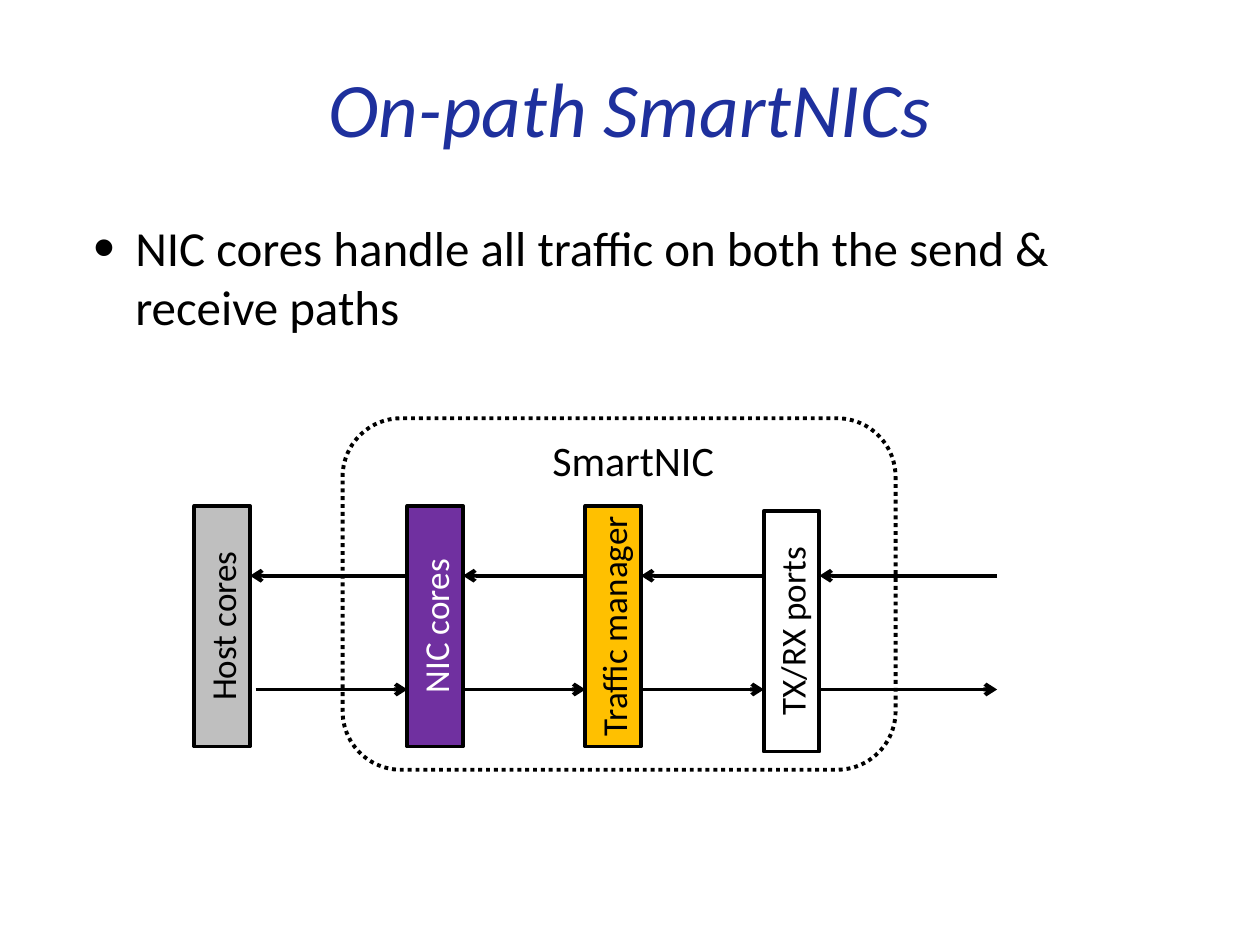
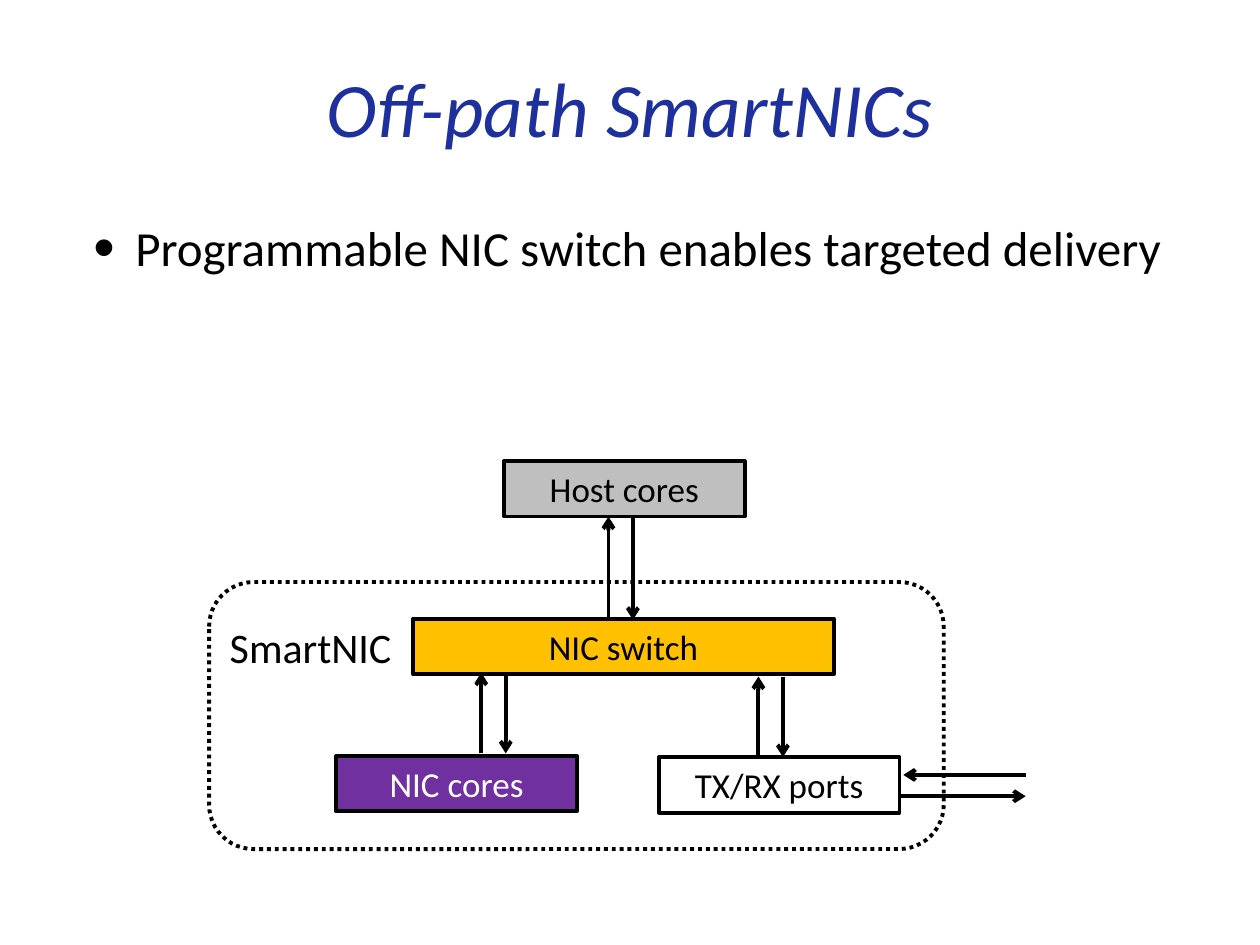
from itertools import pairwise

from lxml.etree import SubElement
from pptx import Presentation
from pptx.dml.color import RGBColor
from pptx.enum.dml import MSO_LINE
from pptx.enum.shapes import MSO_CONNECTOR, MSO_SHAPE
from pptx.enum.text import MSO_ANCHOR, PP_ALIGN
from pptx.oxml.ns import qn
from pptx.util import Pt

BLACK = RGBColor(0x00, 0x00, 0x00)
WHITE = RGBColor(0xFF, 0xFF, 0xFF)
NAVY = RGBColor(0x1E, 0x30, 0x9D)
GREY = RGBColor(0xBF, 0xBF, 0xBF)
PURPLE = RGBColor(0x70, 0x30, 0xA0)
AMBER = RGBColor(0xFF, 0xC0, 0x00)

FONT = "Calibri"
LINE_WIDTH = 2.25
INSET = 3.6
PART_LENGTH, PART_DEPTH = 137.5, 31.7
LABEL_SIZE = (104.4, 36)
BULLET_INDENT = 24


def write(box, text, size=20, color=BLACK, italic=False, align=PP_ALIGN.CENTER,
          anchor=MSO_ANCHOR.MIDDLE, line_spacing=None, space_before=None):
    """Fill a shape or text box with one formatted paragraph and return it."""
    frame = box.text_frame
    frame.word_wrap = True
    frame.vertical_anchor = anchor
    frame.margin_left = frame.margin_right = Pt(INSET)
    frame.margin_top = frame.margin_bottom = Pt(INSET)
    para = frame.paragraphs[0]
    para.alignment = align
    if line_spacing is not None:
        para.line_spacing = line_spacing
    if space_before is not None:
        para.space_before = Pt(space_before)
    span = para.add_run()
    span.text = text
    span.font.name = FONT
    span.font.size = Pt(size)
    span.font.italic = italic
    span.font.color.rgb = color
    return para


def add_text(page, text, left, top, width, height, **style):
    box = page.shapes.add_textbox(Pt(left), Pt(top), Pt(width), Pt(height))
    return write(box, text, **style)


def add_box(page, kind, left, top, width, height, fill):
    box = page.shapes.add_shape(kind, Pt(left), Pt(top), Pt(width), Pt(height))
    box.shadow.inherit = False
    box.fill.solid()
    box.fill.fore_color.rgb = fill
    box.line.color.rgb = BLACK
    box.line.width = Pt(LINE_WIDTH)
    return box


def add_part(page, text, left, top, fill, width=PART_LENGTH, color=BLACK):
    box = add_box(page, MSO_SHAPE.RECTANGLE, left, top, width, PART_DEPTH, fill)
    write(box, text, color=color)
    return box


def add_arrow(page, start_x, start_y, end_x, end_y):
    """Draw a line with an open arrowhead at its end."""
    arrow = page.shapes.add_connector(
        MSO_CONNECTOR.STRAIGHT, Pt(start_x), Pt(start_y), Pt(end_x), Pt(end_y))
    arrow.line.color.rgb = BLACK
    arrow.line.width = Pt(LINE_WIDTH)
    SubElement(arrow.line._get_or_add_ln(), qn("a:tailEnd"), type="arrow")
    SubElement(arrow._element.spPr, qn("a:effectLst"))


def add_nic_outline(page, left, top, width, height):
    outline = add_box(page, MSO_SHAPE.ROUNDED_RECTANGLE, left, top, width, height, WHITE)
    outline.line.dash_style = MSO_LINE.ROUND_DOT


def add_heading(page, title, bullet, left=49.7, top=28.8, width=620.6):
    """Title with one bullet point below it."""
    add_text(page, title, left, top, width, 71.3, size=44, color=NAVY,
             italic=True, line_spacing=0.9)
    para = add_text(page, bullet, left, top + 92.2, width, 87, size=28,
                    align=PP_ALIGN.LEFT, anchor=MSO_ANCHOR.TOP, space_before=10)
    properties = para._p.get_or_add_pPr()
    properties.set("marL", str(Pt(BULLET_INDENT)))
    properties.set("indent", str(-Pt(BULLET_INDENT)))
    SubElement(properties, qn("a:buSzPct"), val="125000")
    SubElement(properties, qn("a:buFont"), typeface="Arial")
    SubElement(properties, qn("a:buChar"), char="•")


def add_on_path_diagram(page, left, top, width, height):
    """Upright stages in a row, with receive arrows above send arrows."""
    add_nic_outline(page, left, top, width, height)

    # Stages: name, centre from the outline's corner, fill, text colour
    stages = [
        ("Host cores", -68.8, 118.8, GREY, BLACK),
        ("NIC cores", 52.9, 118.8, PURPLE, WHITE),
        ("Traffic manager", 154.6, 118.8, AMBER, BLACK),
        ("TX/RX ports", 256.6, 121.7, WHITE, BLACK),
    ]
    for name, center_x, center_y, fill, color in stages:
        stage = add_part(page, name, left + center_x - PART_LENGTH / 2,
                         top + center_y - PART_DEPTH / 2, fill, color=color)
        stage.rotation = 270

    # Arrows between neighbours, the last pair leading to the network
    half = PART_DEPTH / 2
    network_x = 374
    centers = [stage[1] for stage in stages] + [network_x + half]
    receive_y, send_y = top + 90, top + 155
    for near, far in pairwise(centers):
        near_x, far_x = left + near + half, left + far - half
        add_arrow(page, far_x, receive_y, near_x, receive_y)
        send_gap = 3.3 if near == centers[0] else 0
        add_arrow(page, near_x + send_gap, send_y, far_x, send_y)

    add_text(page, "SmartNIC", left + 113.8, top + 5.8, *LABEL_SIZE, size=24)


def add_off_path_diagram(page, left, top, width, height):
    """A switch that links the host, the NIC cores and the ports."""
    add_nic_outline(page, left, top, width, height)

    # Parts
    add_part(page, "TX/RX ports", left + 257, top + 100.1, WHITE)
    add_part(page, "NIC switch", left + 116.6, top + 20.9, AMBER, width=240.5)
    add_part(page, "NIC cores", left + 72.7, top + 99.4, PURPLE, color=WHITE)
    add_part(page, "Host cores", left + 168.5, top - 69.1, GREY)
    add_text(page, "SmartNIC", left + 5.8, top + 18.7, *LABEL_SIZE, size=24)

    # Up and down arrow pairs: x of the upward one, upper end, lower end
    pair_gap = 14
    for x, upper, lower in [(228.2, -37.4, 21.6), (155.5, 51.8, 97.9), (313.9, 54, 100)]:
        up_x, upper_y, lower_y = left + x, top + upper, top + lower
        add_arrow(page, up_x, lower_y, up_x, upper_y)
        add_arrow(page, up_x + pair_gap, upper_y, up_x + pair_gap, lower_y)

    # Network arrows
    network_x = left + 466.6
    add_arrow(page, network_x, top + 110.2, left + 396.7, top + 110.2)
    add_arrow(page, left + 395.3, top + 122.4, network_x, top + 122.4)


def main():
    deck = Presentation()
    deck.slide_width, deck.slide_height = Pt(720), Pt(540)
    pages = [
        ("On-path SmartNICs",
         "NIC cores handle all traffic on both the send & receive paths",
         add_on_path_diagram, (195.8, 239, 316, 200.9)),
        ("Off-path SmartNICs",
         "Programmable NIC switch enables targeted delivery",
         add_off_path_diagram, (119.5, 332.6, 419.8, 152.6)),
    ]
    for title, bullet, add_diagram, area in pages:
        page = deck.slides.add_slide(deck.slide_layouts[6])
        add_heading(page, title, bullet)
        add_diagram(page, *area)
    deck.save("out.pptx")


if __name__ == "__main__":
    main()
